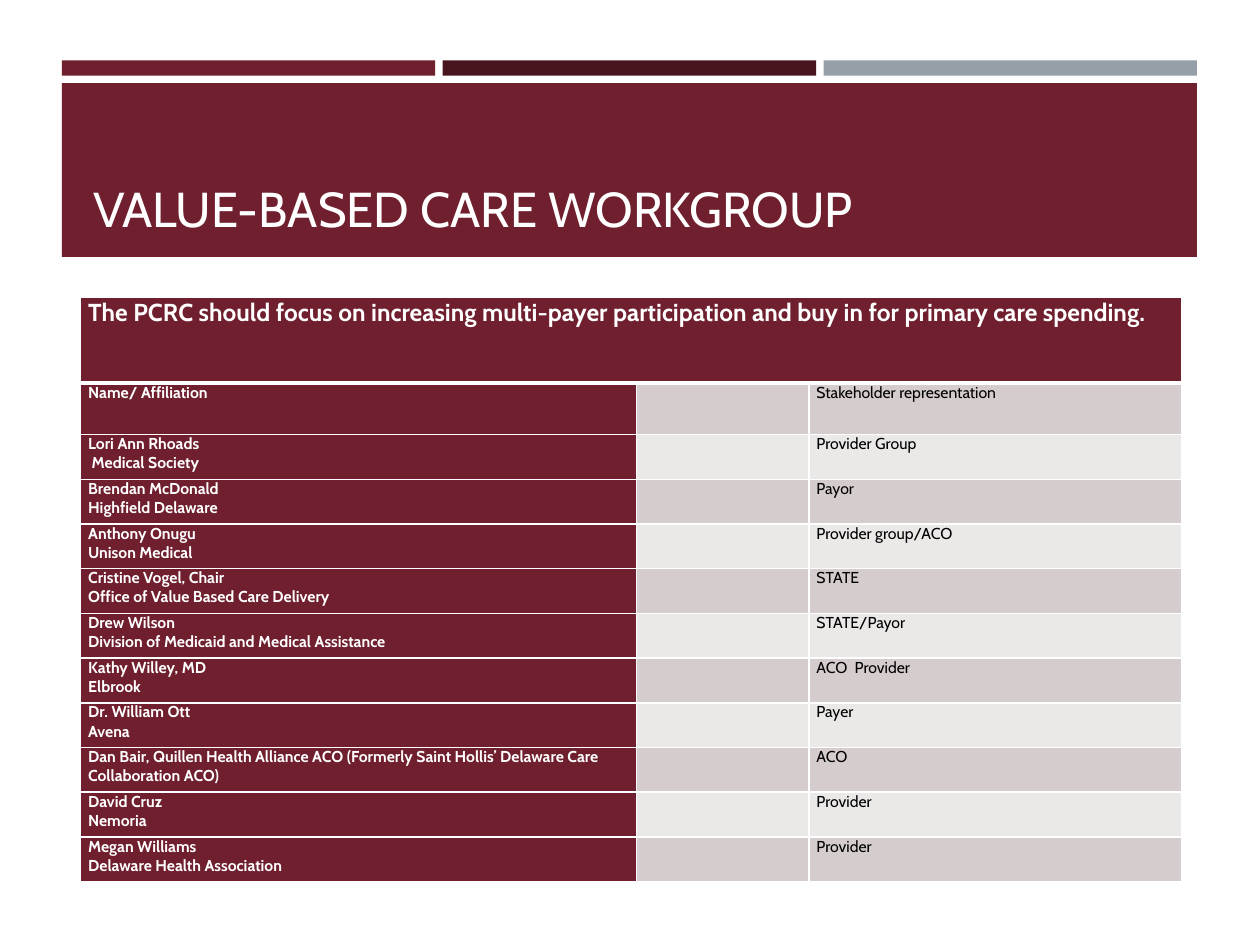
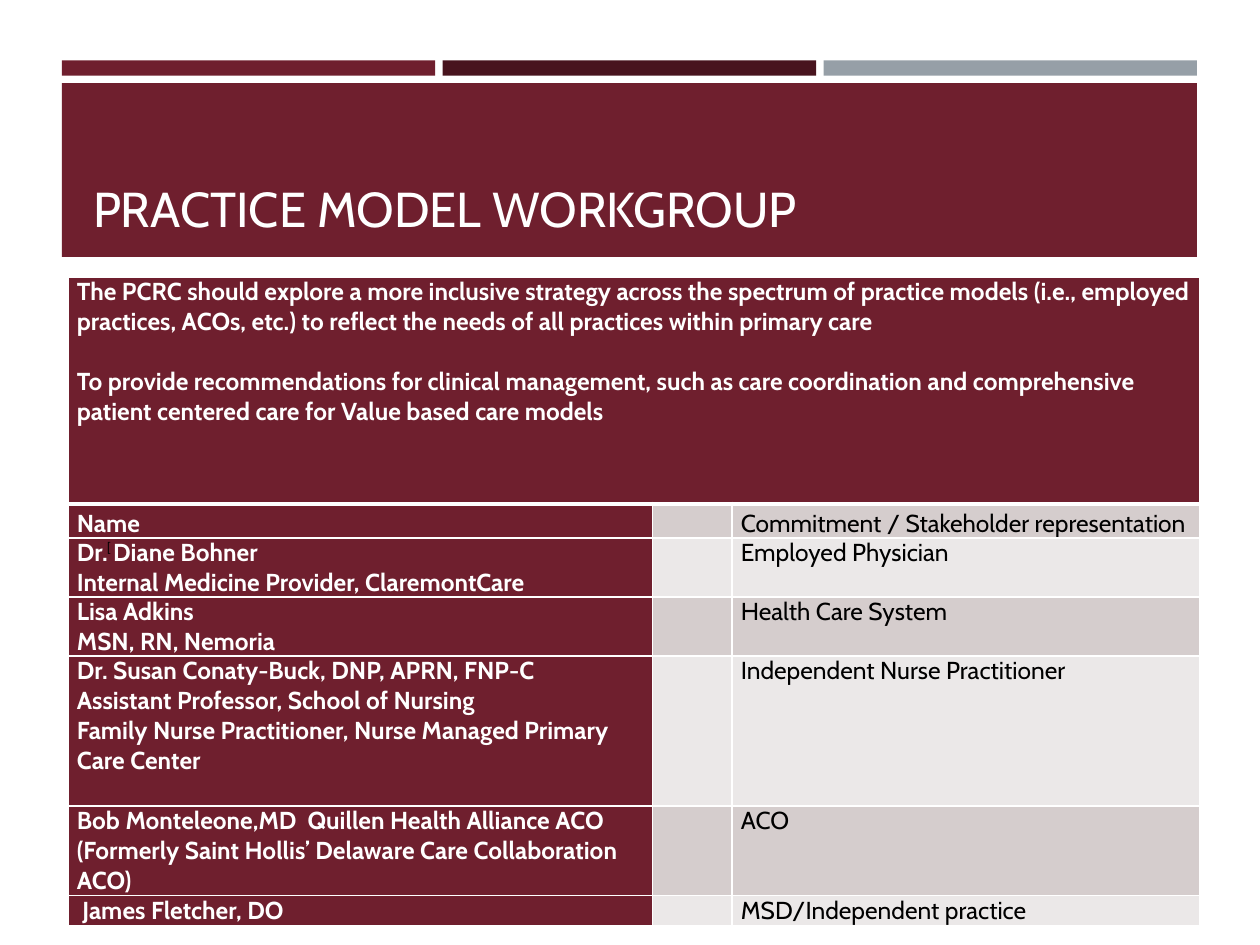
from pptx import Presentation
from pptx import util as u
from pptx.dml import color
from pptx.enum import shapes, text
from pptx.oxml import ns
from lxml import etree

COLORS = {
    "wine": "6F1F2E",
    "dark": "48141E",
    "steel": "969FA7",
    "band": "D5CDCD",
    "pale": "EBE8E8",
    "white": "FFFFFF",
    "black": "000000",
}
COLUMNS, ROWS = 100, 75
EDGE, SPAN, GAP = 4.9, 90.1, 0.6
THIN, THICK = 1, 3

VALUE_MEMBERS = [
    ("Name/ Affiliation", "Stakeholder representation"),
    ("Lori Ann Rhoads\n Medical Society", "Provider Group"),
    ("Brendan McDonald\nHighfield Delaware", "Payor"),
    ("Anthony Onugu\nUnison Medical", "Provider group/ACO"),
    ("Cristine Vogel, Chair\nOffice of Value Based Care Delivery", "STATE"),
    ("Drew Wilson\nDivision of Medicaid and Medical Assistance", "STATE/Payor"),
    ("Kathy Willey, MD\nElbrook", "ACO  Provider"),
    ("Dr. William Ott\nAvena", "Payer"),
    ("Dan Bair, Quillen Health Alliance ACO (Formerly Saint Hollis’ "
     "Delaware Care Collaboration ACO)", "ACO"),
    ("David Cruz\nNemoria", "Provider"),
    ("Megan Williams\nDelaware Health Association", "Provider"),
]
PRACTICE_MEMBERS = [
    ("Name", "Commitment / Stakeholder representation"),
    ("Dr. Diane Bohner\nInternal Medicine Provider, ClaremontCare",
     "Employed Physician"),
    ("Lisa Adkins\nMSN, RN, Nemoria", "Health Care System"),
    ("Dr. Susan Conaty-Buck, DNP, APRN, FNP-C\n"
     "Assistant Professor, School of Nursing\n"
     "Family Nurse Practitioner, Nurse Managed Primary Care Center",
     "Independent Nurse Practitioner"),
    ("Bob Monteleone,MD  Quillen Health Alliance ACO (Formerly Saint Hollis’ "
     "Delaware Care Collaboration ACO)", "ACO"),
    (" James Fletcher, DO", "MSD/Independent practice"),
]
VALUE_GOAL = ("The PCRC should focus on increasing multi-payer participation "
              "and buy in for primary care spending.")
PRACTICE_GOAL = (
    "The PCRC should explore a more inclusive strategy across the spectrum of "
    "practice models (i.e., employed practices, ACOs, etc.) to reflect the needs "
    "of all practices within primary care\n"
    "To provide recommendations for clinical management, such as care coordination "
    "and comprehensive patient centered care for Value based care models")


def rgb(name):
    return color.RGBColor.from_string(COLORS[name])


def apply(target, values):
    for name, value in values.items():
        setattr(target, name, value)


class Board:
    def __init__(self, deck):
        self.deck = deck
        self.page = None

    def across(self, columns):
        return round(self.deck.slide_width * columns / COLUMNS)

    def down(self, rows):
        return round(self.deck.slide_height * rows / ROWS)

    def place(self, left, top, width, height):
        return (self.across(left), self.down(top),
                self.across(width), self.down(height))

    def start(self, title):
        self.page = self.deck.slides.add_slide(self.deck.slide_layouts[6])
        width = (SPAN - 2 * GAP) / 3
        for index, fill in enumerate(("wine", "dark", "steel")):
            self.band(EDGE + index * (width + GAP), 4.8, width, 1.2, fill)
        self.band(EDGE, 6.6, SPAN, 13.8, "wine")
        self.label(title, (6.4, 7.5, 87.4, 11.8), text.MSO_ANCHOR.BOTTOM,
                   size=28, ink="white")

    def band(self, left, top, width, height, fill):
        band = self.page.shapes.add_shape(
            shapes.MSO_SHAPE.RECTANGLE, *self.place(left, top, width, height))
        band.shadow.inherit = False
        band.fill.solid()
        band.fill.fore_color.rgb = rgb(fill)
        band.line.fill.background()

    def label(self, words, area, anchor, **style):
        box = self.page.shapes.add_textbox(*self.place(*area))
        apply(box.text_frame, {"word_wrap": True, "vertical_anchor": anchor})
        self.typeset(box.text_frame, words, **style)

    def typeset(self, frame, words, size, ink, bold=False, face="Cabin",
                spacing=1.0, gap=0):
        for index, line in enumerate(words.split("\n")):
            para = frame.add_paragraph() if index else frame.paragraphs[0]
            para.line_spacing = spacing
            if index and gap:
                para.space_before = u.Pt(gap)
            span = para.add_run()
            span.text = line
            apply(span.font, {"name": face, "size": u.Pt(size), "bold": bold})
            span.font.color.rgb = rgb(ink)

    def border(self, cell, sides):
        properties = cell._tc.get_or_add_tcPr()
        for side, width in sides.items():
            line = etree.SubElement(properties, ns.qn(f"a:ln{side}"),
                                    w=str(int(u.Pt(width))))
            fill = etree.SubElement(line, ns.qn("a:solidFill"))
            etree.SubElement(fill, ns.qn("a:srgbClr"), val=COLORS["white"])

    def cell(self, cell, words, fill, inset, sides, **style):
        apply(cell, {"margin_left": self.across(inset),
                     "margin_right": self.across(inset),
                     "margin_top": 0, "margin_bottom": 0})
        self.border(cell, sides)
        cell.fill.solid()
        cell.fill.fore_color.rgb = rgb(fill)
        if words:
            self.typeset(cell.text_frame, words, **style)
        else:
            para = cell.text_frame.paragraphs[0]
            etree.SubElement(para._p, ns.qn("a:endParaRPr"),
                             sz=str(style["size"] * 100))

    def roster(self, corner, widths, heights, goal, members, size, inset,
               head_spacing=1.0):
        frame = self.page.shapes.add_table(
            len(heights), len(widths),
            *self.place(*corner, sum(widths), sum(heights)))
        table = frame.table
        apply(table, {"first_row": False, "horz_banding": False})
        for column, width in zip(table.columns, widths):
            column.width = self.across(width)
        for row, height in zip(table.rows, heights):
            row.height = self.down(height)
        table.cell(0, 0).merge(table.cell(0, 2))
        sides = dict.fromkeys("LRTB", THIN)
        for column in range(3):
            self.cell(table.cell(0, column), "" if column else goal, "wine", inset,
                      sides | {"B": THICK}, size=14, ink="white", bold=True, gap=17)
        for row, (name, role) in enumerate(members, 1):
            shade = "band" if row % 2 else "pale"
            edges = sides | {"T": THICK if row == 1 else THIN}
            spacing = head_spacing if row == 1 else 1.0
            looks = ((name, "wine", "white"), ("", shade, "black"),
                     (role, shade, "black"))
            for column, (words, fill, ink) in enumerate(looks):
                self.cell(table.cell(row, column), words, fill, inset, edges,
                          size=size, ink=ink, bold=column == 0, spacing=spacing)


def main():
    deck = Presentation()
    apply(deck, {"slide_width": u.Inches(10), "slide_height": u.Inches(7.5)})
    board = Board(deck)

    board.start("VALUE-BASED CARE WORKGROUP")
    board.roster((6.4, 23.6), (44.1, 13.7, 29.6), [6.8, 4.1] + [3.55] * 10,
                 VALUE_GOAL, VALUE_MEMBERS, size=9, inset=0.6)

    board.start("PRACTICE MODEL WORKGROUP")
    board.roster((5.4, 22), (46.4, 6.3, 37.1), (18, 2.6, 4.7, 4.7, 11.9, 7.1, 2.4),
                 PRACTICE_GOAL, PRACTICE_MEMBERS, size=14, inset=0.7,
                 head_spacing=1.15)
    board.label("[", (7.5, 42.2, 71.9, 2.4), text.MSO_ANCHOR.MIDDLE,
                size=8, ink="black", face="Calibri")

    deck.save("out.pptx")


if __name__ == "__main__":
    main()
